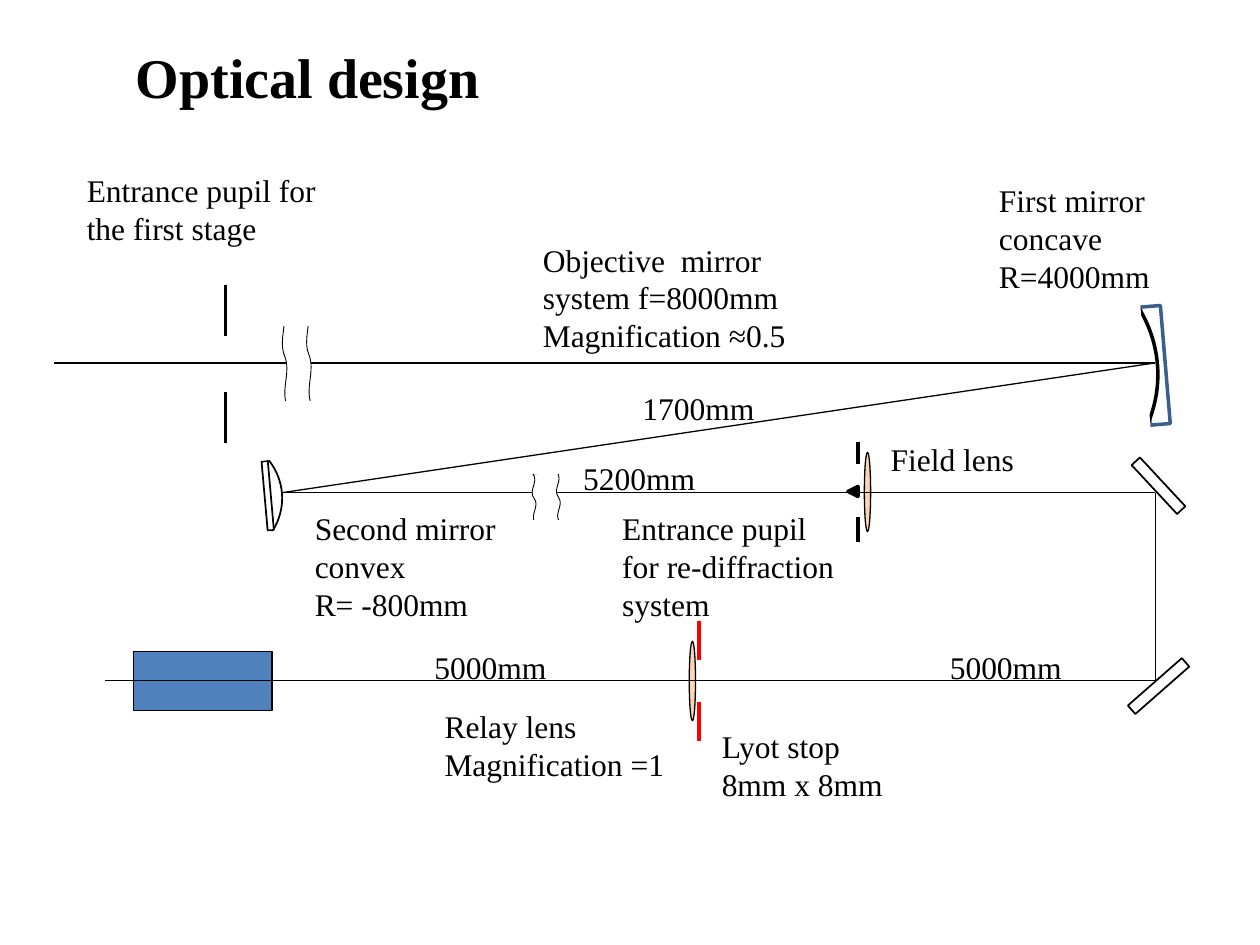
"""Build the optical design slide: folded light path, mirrors, lenses and stops."""
from lxml import etree
from pptx import Presentation
from pptx.dml.color import RGBColor
from pptx.enum.shapes import MSO_CONNECTOR, MSO_SHAPE
from pptx.enum.text import MSO_AUTO_SIZE
from pptx.oxml.ns import qn
from pptx.util import Inches, Pt

RECT, OVAL = MSO_SHAPE.RECTANGLE, MSO_SHAPE.OVAL
TRIANGLE, WAVE = MSO_SHAPE.ISOSCELES_TRIANGLE, MSO_SHAPE.DOUBLE_WAVE
STRAIGHT = MSO_CONNECTOR.STRAIGHT
FIT_TEXT = MSO_AUTO_SIZE.SHAPE_TO_FIT_TEXT
FONT = "Times New Roman"
COLORS = {
    "white": "FFFFFF", "black": "000000", "red": "FF0000",
    "lens": "FCD5B5", "detector": "4F81BD", "mirror edge": "3A5F8C",
}

prs = Presentation()
prs.slide_width, prs.slide_height = Inches(10), Inches(7.5)
CELL = prs.slide_width / 100
slide = prs.slides.add_slide(prs.slide_layouts[6])


def add_part(kind, box, fill="white", edge="white", weight=2, turn=0):
    part = slide.shapes.add_shape(kind, *(round(n * CELL) for n in box))
    part.shadow.inherit = False
    part.rotation = turn
    part.fill.solid()
    part.fill.fore_color.rgb = RGBColor.from_string(COLORS[fill])
    part.line.color.rgb = RGBColor.from_string(COLORS[edge])
    part.line.width = Pt(weight)


def add_ray(start, end, color="black", weight=0.75):
    ray = slide.shapes.add_connector(STRAIGHT, *(round(n * CELL) for n in start + end))
    etree.SubElement(ray._element.spPr, qn("a:effectLst"))
    ray.line.color.rgb = RGBColor.from_string(COLORS[color])
    ray.line.width = Pt(weight)


FIRST_TILT, SECOND_TILT, WAVE_TURN = -4.8, -5.1, 87.2
mirrors = [
    (RECT, (90.9, 24.3, 1.6, 9.4), "white", "mirror edge", 2, FIRST_TILT),
    (OVAL, (69.1, 19.2, 22.8, 21.3), "white", "black", 2, FIRST_TILT),
    (RECT, (65.7, 15.9, 25, 25.6), "white", "white", 2, FIRST_TILT),
    (OVAL, (11.4, 34.5, 11, 10.2), "white", "black", 1, SECOND_TILT),
    (RECT, (21, 36.6, 0.5, 5.5), "white", "black", 1, SECOND_TILT),
    (RECT, (10.8, 32.7, 11.8, 4.2), "white", "white", 0.25, SECOND_TILT),
    (RECT, (12.2, 42.5, 11.8, 4.2), "white", "white", 0.25, SECOND_TILT),
    (RECT, (10.6, 36.5, 2.4, 7.1), "white", "white", 2, SECOND_TILT),
    (RECT, (91.5, 35.9, 0.9, 5.3), "white", "black", 1, -42.9),
    (RECT, (91.5, 51.6, 0.9, 5.7), "white", "black", 1, 48.7),
]
for mirror in mirrors:
    add_part(*mirror)

stops = [
    (68.1, 35.1, 43, "black", (67.3, 37, 1.6, 3.9)),
    (55.5, 49.3, 58.8, "red", (54.7, 52.5, 1.6, 3.1)),
    (17.9, 22.6, 35.2, "black", (15.5, 26.8, 4.7, 4.2)),
]
for column, top, bottom, color, opening in stops:
    add_ray((column, top), (column, bottom), color, 2.25)
    add_part(RECT, opening)

add_part(TRIANGLE, (67.3, 38.6, 0.8, 0.8), "black", "black", 2, 270)
for lens_left, lens_top in [(68.6, 35.9), (54.7, 50.9)]:
    add_part(OVAL, (lens_left, lens_top, 0.5, 6.3), "lens", "black", 0.75)
add_part(RECT, (10.6, 51.7, 11, 4.7), "detector", "black", 1)

light_path = [(4.3, 28.8), (91.7, 28.8), (22.4, 39.1), (91.7, 39.1), (91.7, 54), (8.3, 54)]
for start, end in zip(light_path, light_path[1:]):
    add_ray(start, end)

path_breaks = [
    ((41.4, 38.4, 3.9, 2.2), (40.6, 36.7, 4.7, 0.8), (42.1, 41.4, 4.7, 0.8)),
    ((19.6, 27.1, 7.9, 2.2), (20.8, 22.5, 4.7, 3.2), (22.4, 32, 4.7, 1.6)),
]
for wave, upper_trim, lower_trim in path_breaks:
    add_part(WAVE, wave, "white", "black", 0.5, WAVE_TURN)
    add_part(RECT, upper_trim)
    add_part(RECT, lower_trim)

labels = [
    ((9.8, 2.9, 78.7, 6.4), ["Optical design"], 32),
    ((5.9, 13.1, 20.5, 7.1), ["Entrance pupil for the first stage"], 18),
    ((42.1, 18.6, 24.4, 10.1), ["Objective  mirror system f=8000mm", "Magnification ≈0.5"], 18),
    ((78.3, 13.9, 15.7, 10.1), ["First mirror", "concave", "R=4000mm"], 18),
    ((24, 39.9, 21.3, 10.1), ["Second mirror", "convex", "R= -800mm"], 18),
    ((48.4, 39.9, 19.7, 10.1), ["Entrance pupil for re-diffraction system"], 18),
    ((69.7, 34.4, 14.2, 4), ["Field lens"], 18),
    ((56.3, 57.2, 22.8, 7.1), ["Lyot stop", "8mm x 8mm"], 18),
    ((34.3, 55.6, 19.7, 7.1), ["Relay lens", "Magnification =1"], 18),
    ((74.4, 50.9, 12.6, 4), ["5000mm"], 18),
    ((33.5, 50.9, 12.6, 4), ["5000mm"], 18),
    ((45.3, 35.9, 14.2, 4), ["5200mm"], 18),
    ((50, 30.4, 14.2, 4), ["1700mm"], 18),
]
for box, lines, size in labels:
    frame = slide.shapes.add_textbox(*(round(n * CELL) for n in box)).text_frame
    frame.word_wrap = True
    frame.auto_size = FIT_TEXT
    frame.text = "\n".join(lines)
    for paragraph in frame.paragraphs:
        paragraph.font.name = FONT
        paragraph.font.size = Pt(size)
        paragraph.font.bold = size == 32
        paragraph.font.color.rgb = RGBColor.from_string(COLORS["black"])

prs.save("out.pptx")
